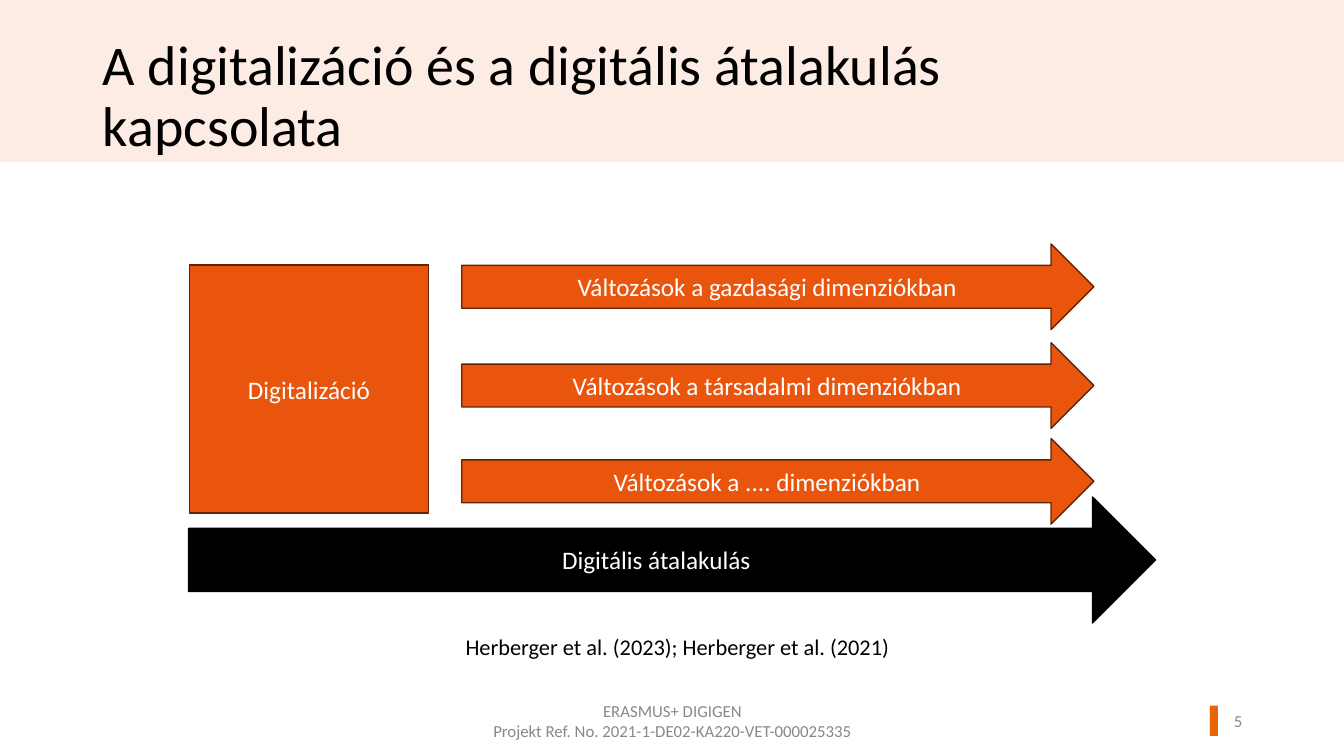
import pptx
import pptx.util
import pptx.dml.color
import pptx.enum.shapes
import pptx.enum.text

Inches = pptx.util.Inches
SHAPE = pptx.enum.shapes.MSO_SHAPE
ALIGN = pptx.enum.text.PP_ALIGN
ANCHOR = pptx.enum.text.MSO_ANCHOR

ORANGE, BROWN, BLACK, WHITE, GREY = "E9550D", "622305", "000000", "FFFFFF", "888888"
TITLE = "A digitalizáció és a digitális átalakulás kapcsolata"
CHANGES = [
    ("Változások a gazdasági dimenziókban", 2.42),
    ("Változások a társadalmi dimenziókban", 3.4),
    ("Változások a .... dimenziókban", 4.35),
]
BLOCKS = [
    ("Digitalizáció", SHAPE.RECTANGLE, (1.88, 2.63, 2.37, 2.46), ORANGE, BROWN),
    ("Digitális átalakulás", SHAPE.RIGHT_ARROW, (1.87, 4.93, 9.59, 1.25), BLACK, BLACK),
] + [
    (text, SHAPE.RIGHT_ARROW, (4.58, top, 6.27, 0.85), ORANGE, BROWN)
    for text, top in CHANGES
]
BANDS = [((0, 0, 13.33, 1.61), "FDECE3"), ((12, 7, 0.08, 0.3), "E86507")]
TEXTS = [
    ("5", (11.77, 6.95, 0.65, 0.4), 12, GREY, ALIGN.RIGHT, ANCHOR.MIDDLE),
    ("ERASMUS+ DIGIGEN\vProjekt Ref. No. 2021-1-DE02-KA220-VET-000025335",
     (4.42, 6.95, 4.5, 0.4), 12, GREY, ALIGN.CENTER, ANCHOR.MIDDLE),
    ("Herberger et al. (2023); Herberger et al. (2021)",
     (3.92, 6.23, 5.6, 0.37), 16, BLACK, ALIGN.CENTER, ANCHOR.TOP),
]


def rgb(color):
    return pptx.dml.color.RGBColor.from_string(color)


def write(sp, text, size, color, align, anchor):
    tf = sp.text_frame
    tf.text = text
    tf.word_wrap = True
    tf.auto_size = pptx.enum.text.MSO_AUTO_SIZE.NONE
    tf.vertical_anchor = anchor
    p = tf.paragraphs[0]
    p.alignment = align
    for r in p.runs:
        r.font.name = "Calibri"
        r.font.size = pptx.util.Pt(size)
        r.font.color.rgb = rgb(color)
    return p


def add_block(s, shape, box, fill, line=None):
    sp = s.shapes.add_shape(shape, *map(Inches, box))
    sp.shadow.inherit = False
    sp.fill.solid()
    sp.fill.fore_color.rgb = rgb(fill)
    if line:
        sp.line.color.rgb = rgb(line)
        sp.line.width = pptx.util.Pt(1)
    else:
        sp.line.fill.background()
    return sp


def main():
    prs = pptx.Presentation()
    prs.slide_width, prs.slide_height = Inches(13.33), Inches(7.5)
    s = prs.slides.add_slide(prs.slide_layouts[5])

    title = s.shapes.title
    title.left, title.top, title.width, title.height = map(Inches, (0.92, 0.32, 9.93, 0.85))
    p = write(title, TITLE, 40, BLACK, ALIGN.LEFT, ANCHOR.TOP)
    p.line_spacing = 0.9

    for box, fill in BANDS:
        band = add_block(s, SHAPE.RECTANGLE, box, fill)
        title._element.addprevious(band._element)
    for text, shape, box, fill, line in BLOCKS:
        sp = add_block(s, shape, box, fill, line)
        write(sp, text, 18, WHITE, ALIGN.CENTER, ANCHOR.MIDDLE)
    for text, box, size, color, align, anchor in TEXTS:
        sp = s.shapes.add_textbox(*map(Inches, box))
        write(sp, text, size, color, align, anchor)

    prs.save("out.pptx")


if __name__ == "__main__":
    main()
